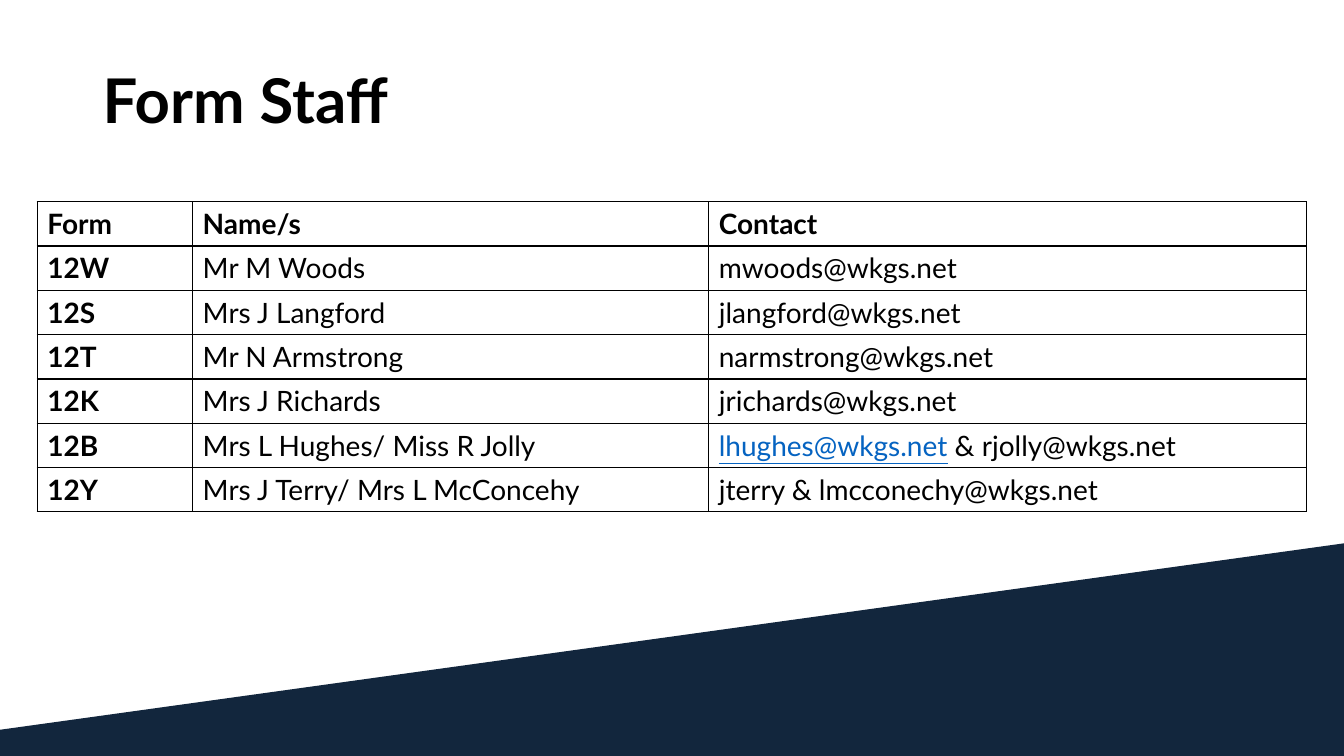
from lxml.etree import SubElement
from pptx import Presentation
from pptx.dml.color import RGBColor
from pptx.enum.text import MSO_ANCHOR
from pptx.oxml.ns import qn
from pptx.util import Inches, Pt

FONT = "Lato"
BLACK = RGBColor(0x00, 0x00, 0x00)
NAVY = RGBColor(0x12, 0x26, 0x3D)
LINK_BLUE = RGBColor(0x05, 0x63, 0xC1)

HEADINGS = ("Form", "Name/s", "Contact")
STAFF = [
    ("12W", "Mr M Woods", "mwoods@wkgs.net"),
    ("12S", "Mrs J Langford", "jlangford@wkgs.net"),
    ("12T", "Mr N Armstrong", "narmstrong@wkgs.net"),
    ("12K", "Mrs J Richards", "jrichards@wkgs.net"),
    ("12B", "Mrs L Hughes/ Miss R Jolly", "lhughes@wkgs.net"),
    ("12Y", "Mrs J Terry/ Mrs L McConcehy", "jterry & lmcconechy@wkgs.net"),
]
COLUMN_WIDTHS = (1.54, 5.12, 5.93)
ROW_HEIGHT = 0.44


def format_run(run, size, bold=False, color=BLACK):
    run.font.name = FONT
    run.font.size = Pt(size)
    run.font.bold = bold
    run.font.color.rgb = color


def add_borders(cell):
    properties = cell._tc.get_or_add_tcPr()
    for position, side in enumerate(("a:lnL", "a:lnR", "a:lnT", "a:lnB")):
        line = properties.makeelement(qn(side), {"w": str(Pt(1))})
        fill = SubElement(line, qn("a:solidFill"))
        SubElement(fill, qn("a:srgbClr"), val=str(BLACK))
        properties.insert(position, line)


presentation = Presentation()
presentation.slide_width = Inches(13.33)
presentation.slide_height = Inches(7.5)
slide = presentation.slides.add_slide(presentation.slide_layouts[6])

# Sloping band along the bottom
builder = slide.shapes.build_freeform(Inches(0), Inches(7.24))
builder.add_line_segments(
    [(Inches(x), Inches(y)) for x, y in ((13.33, 5.39), (13.33, 7.5), (0, 7.5))]
)
band = builder.convert_to_shape()
band.shadow.inherit = False
band.fill.solid()
band.fill.fore_color.rgb = NAVY
band.line.fill.background()

# Title
title = slide.shapes.add_textbox(Inches(0.92), Inches(0.51), Inches(11.5), Inches(1.03))
title.text_frame.word_wrap = True
title.text_frame.vertical_anchor = MSO_ANCHOR.MIDDLE
title.text_frame.text = "Form Staff"
paragraph = title.text_frame.paragraphs[0]
paragraph.line_spacing = 0.9
format_run(paragraph.runs[0], 44, bold=True)

# Staff table
rows = [HEADINGS, *STAFF]
table = slide.shapes.add_table(
    len(rows), len(HEADINGS), Inches(0.37), Inches(2),
    Inches(sum(COLUMN_WIDTHS)), Inches(ROW_HEIGHT * len(rows)),
).table
for column, width in zip(table.columns, COLUMN_WIDTHS):
    column.width = Inches(width)
for row_index, row in enumerate(rows):
    table.rows[row_index].height = Inches(ROW_HEIGHT)
    for column_index, text in enumerate(row):
        cell = table.cell(row_index, column_index)
        cell.text = text
        cell.fill.background()
        add_borders(cell)
        bold = row_index == 0 or column_index == 0
        format_run(cell.text_frame.paragraphs[0].runs[0], 20, bold)

# Two addresses for 12B, the first one styled as a link
paragraph = table.cell(5, 2).text_frame.paragraphs[0]
format_run(paragraph.runs[0], 20, color=LINK_BLUE)
paragraph.runs[0].font.underline = True
second_address = paragraph.add_run()
second_address.text = " & rjolly@wkgs.net"
format_run(second_address, 20)

presentation.save("out.pptx")
